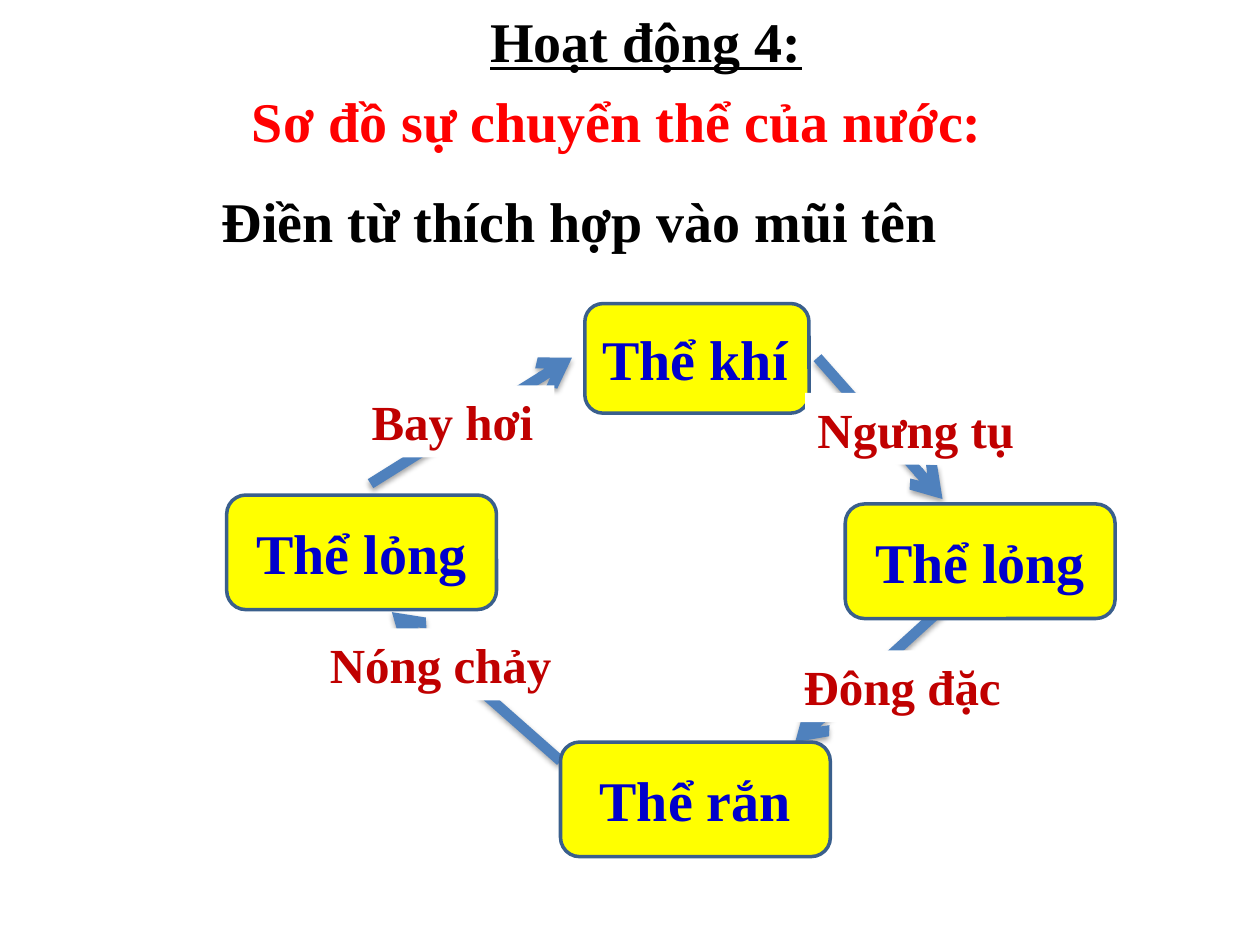
from lxml.etree import SubElement
from pptx import Presentation
from pptx.dml.color import RGBColor
from pptx.enum.shapes import MSO_CONNECTOR, MSO_SHAPE
from pptx.enum.text import MSO_ANCHOR as Anchor, MSO_AUTO_SIZE as AutoSize, PP_ALIGN as Align
from pptx.oxml.ns import qn
from pptx.util import Cm, Pt

COLORS = {"black": "000000", "red": "FF0000", "arrow": "4F81BD", "state": "FFFF00",
          "outline": "3A5F8C", "state text": "0000CC", "label": "FFFFFF", "label text": "C00000"}
FONT = "Times New Roman"

TITLE = ("Hoạt động 4:", (0, 0, 26.04, 1.62))
HEADINGS = [
    ("Sơ đồ sự chuyển thể của nước:", "red", (4.83, 1.62, 18.29, 1.62)),
    ("Điền từ thích hợp vào mũi tên", "black", (4.22, 3.63, 20.4, 1.62)),
]
ARROWS = [
    (7.47, 9.75, 11.53, 7.21),
    (16.48, 7.21, 19, 10.06),
    (19.46, 11.84, 16.03, 14.96),
    (11.3, 15.34, 7.9, 12.34),
]
STATES = [
    ("Thể khí", Align.LEFT, (11.79, 6.12, 4.52, 2.21)),
    ("Thể lỏng", Align.CENTER, (17.04, 10.16, 5.44, 2.31)),
    ("Thể lỏng", Align.CENTER, (4.57, 9.98, 5.44, 2.31)),
    ("Thể rắn", Align.CENTER, (11.3, 14.96, 5.44, 2.31)),
]
LABELS = [
    ("Bay hơi", (7.24, 7.77, 3.94, 1.45)),
    ("Nóng chảy", (6.4, 12.67, 5.16, 1.45)),
    ("Ngưng tụ", (16.23, 7.92, 5.46, 1.45)),
    ("Đông đặc", (15.95, 13.11, 5, 1.45)),
]


def color(name):
    """Return the named colour."""
    return RGBColor.from_string(COLORS[name])


def lengths(values):
    """Turn centimetres into slide lengths."""
    return [Cm(value) for value in values]


def write(shape, text, color_name, size=32, align=Align.LEFT, anchor=Anchor.TOP):
    """Put one bold paragraph into a shape."""
    frame = shape.text_frame
    frame.text = text
    frame.word_wrap = True
    frame.vertical_anchor = anchor
    frame.auto_size = AutoSize.NONE if anchor == Anchor.MIDDLE else AutoSize.SHAPE_TO_FIT_TEXT
    paragraph = frame.paragraphs[0]
    paragraph.alignment = align
    font = paragraph.font
    font.name, font.size, font.bold = FONT, Pt(size), True
    font.color.rgb = color(color_name)
    return paragraph


def add_box(slide, kind, box, fill):
    """Add a filled shape without shadow or outline."""
    shape = slide.shapes.add_shape(kind, *lengths(box))
    shape.shadow.inherit = False
    shape.fill.solid()
    shape.fill.fore_color.rgb = color(fill)
    shape.line.fill.background()
    return shape


def add_arrow(slide, ends):
    """Add a thick arrow with a soft shadow below it."""
    arrow = slide.shapes.add_connector(MSO_CONNECTOR.STRAIGHT, *lengths(ends))
    arrow.line.color.rgb = color("arrow")
    arrow.line.width = Pt(6)
    SubElement(arrow.line._get_or_add_ln(), qn("a:tailEnd"), type="arrow")
    effects = SubElement(arrow._element.spPr, qn("a:effectLst"))
    shadow = SubElement(effects, qn("a:outerShdw"), blurRad="40000", dist="23000",
                        dir="5400000", rotWithShape="0")
    shade = SubElement(shadow, qn("a:srgbClr"), val=COLORS["black"])
    SubElement(shade, qn("a:alpha"), val="35000")


def main():
    """Build the slide on the changes of state of water."""
    presentation = Presentation()
    presentation.slide_width, presentation.slide_height = Cm(25.4), Cm(19.05)
    slide = presentation.slides.add_slide(presentation.slide_layouts[5])

    text, box = TITLE
    title = slide.shapes.title
    title.left, title.top, title.width, title.height = lengths(box)
    write(title, text, "black", align=Align.CENTER).font.underline = True

    for text, color_name, box in HEADINGS:
        write(slide.shapes.add_textbox(*lengths(box)), text, color_name)
    for ends in ARROWS:
        add_arrow(slide, ends)
    for text, align, box in STATES:
        state = add_box(slide, MSO_SHAPE.ROUNDED_RECTANGLE, box, "state")
        state.line.color.rgb = color("outline")
        state.line.width = Pt(2)
        write(state, text, "state text", align=align, anchor=Anchor.MIDDLE)
    for text, box in LABELS:
        label = add_box(slide, MSO_SHAPE.RECTANGLE, box, "label")
        write(label, text, "label text", size=28)

    presentation.save("out.pptx")


if __name__ == "__main__":
    main()
